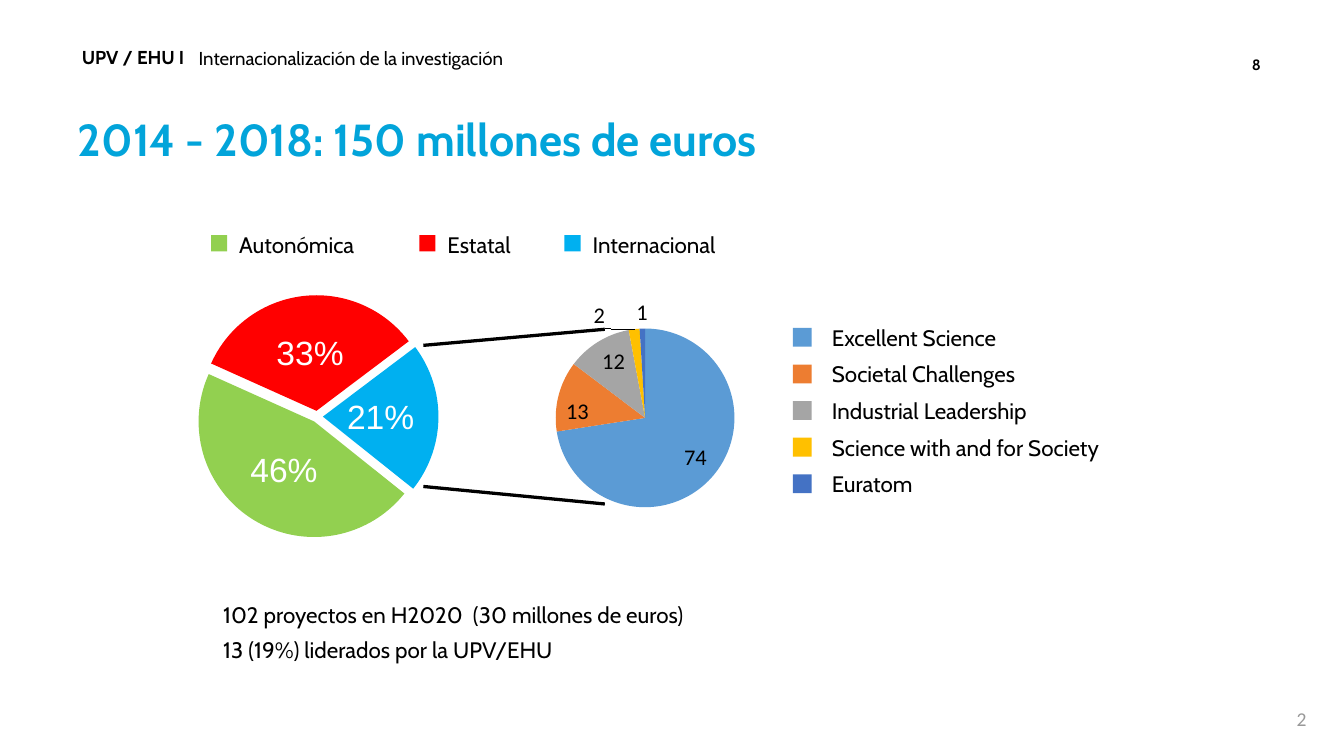
"""Build the slide on research funding for 2014 - 2018."""
from lxml.etree import SubElement
from pptx import Presentation
from pptx.chart.data import CategoryChartData
from pptx.dml.color import RGBColor
from pptx.enum.chart import XL_CHART_TYPE, XL_LABEL_POSITION
from pptx.enum.shapes import MSO_CONNECTOR, MSO_SHAPE
from pptx.enum.text import MSO_ANCHOR, MSO_AUTO_SIZE, PP_ALIGN
from pptx.oxml import parse_xml
from pptx.oxml.ns import nsdecls, qn
from pptx.util import Inches, Pt

THEME = {
    "heading": "Cabin", "share": "Arial", "count": "Calibri",
    "black": "000000", "white": "FFFFFF", "accent": "02A4DA", "muted": "999999",
    "title_size": 24, "share_size": 18, "body_size": 12,
    "footer_size": 10.5, "header_size": 10, "page_size": 8,
}

TITLE = "2014 - 2018: 150 millones de euros"
BRAND = "UPV / EHU I"
SECTION = "Internacionalización de la investigación"
PAGE, FOOTER_PAGE = "8", "2"
NOTES = ["102 proyectos en H2020  (30 millones de euros)", "13 (19%) liderados por la UPV/EHU"]

FUNDING = [("Internacional", 0.21, "00B0F0"), ("Autonómica", 0.46, "92D050"), ("Estatal", 0.33, "FF0000")]
FUNDING_KEY_LEFT = {"Autonómica": 1.57, "Estatal": 3.12, "Internacional": 4.2}
PROJECTS = [
    ("Excellent Science", 74, "5B9BD5"),
    ("Societal Challenges", 13, "ED7D31"),
    ("Industrial Leadership", 12, "A5A5A5"),
    ("Science with and for Society", 2, "FFC000"),
    ("Euratom", 1, "4472C4"),
]
PROJECT_KEY_TOP, PROJECT_KEY_BOTTOM = 2.44, 3.53
OUTSIDE_LABEL_SHIFT = {3: (-0.2, 0.06), 4: (0, 0.04)}
ZOOM_LINES = [((3.15, 2.57), (4.5, 2.45)), ((3.15, 3.62), (4.5, 3.75))]


def style(font, size, color="black", face="heading", bold=False):
    font.name, font.size, font.bold = THEME[face], Pt(THEME[size]), bold
    font.color.rgb = RGBColor.from_string(THEME[color])


def place(shape, left, top, width, height):
    shape.left, shape.top, shape.width, shape.height = map(Inches, (left, top, width, height))


def write(frame, lines, size, anchor=MSO_ANCHOR.TOP, align=PP_ALIGN.LEFT, inset=None, spacing=None, **look):
    frame.word_wrap, frame.auto_size, frame.vertical_anchor = True, MSO_AUTO_SIZE.NONE, anchor
    if inset is not None:
        frame.margin_left = frame.margin_right = frame.margin_top = frame.margin_bottom = Inches(inset)
    for index, line in enumerate(lines):
        paragraph = frame.add_paragraph() if index else frame.paragraphs[0]
        paragraph.alignment, paragraph.space_before = align, Pt(0)
        if spacing:
            paragraph.line_spacing = spacing
        run = paragraph.add_run()
        run.text = line
        style(run.font, size, **look)


def add_text(slide, box, line, size, **look):
    write(slide.shapes.add_textbox(*map(Inches, box)).text_frame, [line], size, **look)


def add_key(slide, left, top, side, gap, width, label, color):
    swatch = slide.shapes.add_shape(MSO_SHAPE.RECTANGLE, *map(Inches, (left, top, side, side)))
    swatch.shadow.inherit = False
    swatch.fill.solid()
    swatch.fill.fore_color.rgb = RGBColor.from_string(color)
    swatch.line.fill.background()
    add_text(slide, (left + gap, top - 0.03, width, 0.2), label, "body_size", inset=0)


def add_pie(slide, name, slices, center, side, plot_side, start, number_format, position, explosion=0, **look):
    data = CategoryChartData(number_format=number_format)
    data.categories = [label for label, _, _ in slices]
    data.add_series(name, [value for _, value, _ in slices])
    box = (center[0] - side / 2, center[1] - side / 2, side, side)
    chart = slide.shapes.add_chart(XL_CHART_TYPE.PIE, *map(Inches, box), data).chart
    chart.has_legend = chart.has_title = False
    style(chart.font, **look)
    plot = chart.plots[0]
    plot.vary_by_categories = True
    series = plot.series[0]
    for index, (_, _, color) in enumerate(slices):
        point = series.points[index].format
        point.fill.solid()
        point.fill.fore_color.rgb = RGBColor.from_string(color)
        point.line.fill.background()
        if explosion:
            point_xml = series._element.findall(qn("c:dPt"))[index]
            point_xml.find(qn("c:spPr")).addprevious(
                parse_xml(f'<c:explosion {nsdecls("c")} val="{explosion}"/>'))
    labels = series.data_labels
    labels.show_value, labels.position = True, position
    labels.number_format, labels.number_format_is_linked = number_format, False
    style(labels.font, **look)

    pie = plot._element
    angle = pie.find(qn("c:firstSliceAng"))
    if angle is None:
        angle = SubElement(pie, qn("c:firstSliceAng"))
    angle.set("val", str(start))
    area = pie.getparent()
    for layout in area.findall(qn("c:layout")):
        area.remove(layout)
    share = round(plot_side / side, 2)
    edge = round((1 - share) / 2, 3)
    area.insert(0, parse_xml(
        f'<c:layout {nsdecls("c")}><c:manualLayout><c:layoutTarget val="inner"/>'
        f'<c:xMode val="edge"/><c:yMode val="edge"/><c:x val="{edge}"/><c:y val="{edge}"/>'
        f'<c:w val="{share}"/><c:h val="{share}"/></c:manualLayout></c:layout>'))
    return series


def move_label_outside(series, index, across, down, **look):
    label = series.points[index].data_label
    style(label.font, **look)
    label.position = XL_LABEL_POSITION.OUTSIDE_END
    for label_xml in series._element.iter(qn("c:dLbl")):
        if label_xml.find(qn("c:idx")).get("val") == str(index):
            label_xml.find(qn("c:idx")).addnext(parse_xml(
                f'<c:layout {nsdecls("c")}><c:manualLayout><c:x val="{across:.2f}"/>'
                f'<c:y val="{down:.2f}"/></c:manualLayout></c:layout>'))


def add_zoom_line(slide, start, end):
    line = slide.shapes.add_connector(MSO_CONNECTOR.STRAIGHT, *map(Inches, start + end))
    line.line.width = Pt(1.75)
    line.line.color.rgb = RGBColor.from_string(THEME["black"])
    SubElement(line._element.spPr, qn("a:effectLst"))


def main():
    deck = Presentation()
    deck.slide_width, deck.slide_height = Inches(10), Inches(10 * 9 / 16)
    slide = deck.slides.add_slide(deck.slide_layouts[1])
    title, notes = slide.placeholders

    place(title, 0.58, 0.83, 7.33, 0.4)
    write(title.text_frame, [TITLE], "title_size", inset=0, color="accent", bold=True)
    place(notes, 1.56, 4.36, 7.23, 0.62)
    write(notes.text_frame, NOTES, "body_size", spacing=1.3)
    for paragraph in notes.text_frame.paragraphs:
        properties = paragraph._p.get_or_add_pPr()
        properties.set("marL", "0")
        properties.set("indent", "0")
        SubElement(properties, qn("a:buNone"))

    add_text(slide, (0.51, 0.27, 1.02, 0.29), BRAND, "header_size", anchor=MSO_ANCHOR.BOTTOM, bold=True)
    add_text(slide, (1.38, 0.28, 5.59, 0.3), SECTION, "header_size", anchor=MSO_ANCHOR.MIDDLE)
    add_text(slide, (7.15, 0.33, 2.33, 0.3), PAGE, "page_size",
             anchor=MSO_ANCHOR.MIDDLE, align=PP_ALIGN.RIGHT, bold=True)
    add_text(slide, (9.55, 5.16, 0.64, 0.38), FOOTER_PAGE, "footer_size",
             anchor=MSO_ANCHOR.MIDDLE, inset=0.1, color="muted", face="count")

    for start, end in ZOOM_LINES:
        add_zoom_line(slide, start, end)
    add_pie(slide, "Financiación", FUNDING, (2.36, 3.1), 2, 1.72, 53, "0%", XL_LABEL_POSITION.CENTER,
            explosion=5, size="share_size", color="white", face="share")
    count_look = {"size": "body_size", "face": "count"}
    side = 1.9
    projects = add_pie(slide, "Proyectos", PROJECTS, (4.8, 3.11), side, 1.33, 0, "0",
                       XL_LABEL_POSITION.INSIDE_END, **count_look)
    for index, (across, down) in OUTSIDE_LABEL_SHIFT.items():
        move_label_outside(projects, index, across / side, down / side, **count_look)

    for label, _, color in FUNDING:
        add_key(slide, FUNDING_KEY_LEFT[label], 1.75, 0.12, 0.21, 1.1, label, color)
    pitch = (PROJECT_KEY_BOTTOM - PROJECT_KEY_TOP) / (len(PROJECTS) - 1)
    for row, (label, _, color) in enumerate(PROJECTS):
        add_key(slide, 5.9, PROJECT_KEY_TOP + pitch * row, 0.14, 0.29, 2.5, label, color)

    deck.save("out.pptx")


if __name__ == "__main__":
    main()
